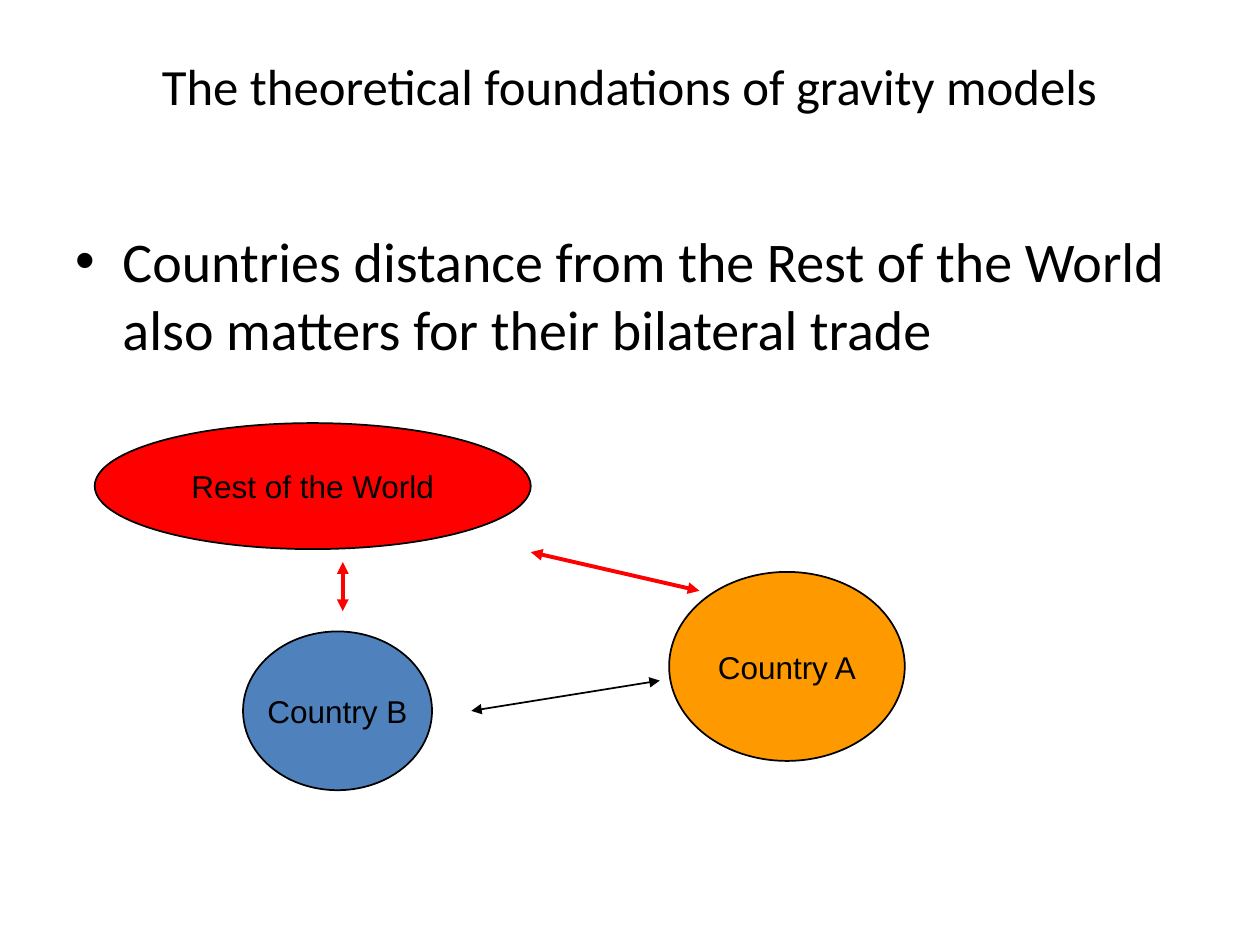
from lxml.etree import SubElement as Sub
from pptx import Presentation as Deck
from pptx.dml.color import RGBColor as Rgb
from pptx.enum.shapes import MSO_CONNECTOR as Link, MSO_SHAPE as Form
from pptx.enum.text import MSO_ANCHOR as Anchor, PP_ALIGN as Align
from pptx.oxml.ns import qn
from pptx.util import Cm, Pt

# Content: places in cm as left, top, width, height
TITLE = ("The theoretical foundations of gravity models", (1.27, 0.76, 22.86, 3.18))
POINT = ("Countries distance from the Rest of the World also matters "
         "for their bilateral trade", (1.27, 4.45, 22.86, 12.57))
NODES = [
    ("Country B", "blue", (4.9, 12.73, 3.81, 3.2)),
    ("Country A", "gold", (13.49, 11.53, 4.75, 3.81)),
    ("Rest of the World", "red", (1.91, 8.53, 8.79, 2.54)),
]
# Arrows: start, end, colour, width
ARROWS = [
    ((9.5, 14.33), (13.3, 13.72), "ink", "thin"),
    ((6.91, 12.32), (6.91, 11.33), "red", "bold"),
    ((14.1, 11.91), (10.7, 11.13), "red", "bold"),
]

THEME = {
    "ink": Rgb(0, 0, 0), "red": Rgb(255, 0, 0),
    "gold": Rgb(255, 153, 0), "blue": Rgb(79, 129, 189),
    "thin": Pt(1), "bold": Pt(2.25),
    "title": {"name": "Calibri", "size": Pt(29)},
    "point": {"name": "Calibri", "size": Pt(32)},
    "node": {"name": "Arial", "size": Pt(18)},
}
INDENT = Cm(0.95)

# Frame formats
HEAD = {"word_wrap": True, "vertical_anchor": Anchor.MIDDLE,
        "margin_bottom": Cm(1.37)}  # title sits one line above the middle
BODY = {"word_wrap": True, "vertical_anchor": Anchor.TOP}
LABEL = {"word_wrap": False, "vertical_anchor": Anchor.MIDDLE}


def put(item, values):
    for key, val in values.items():
        setattr(item, key, val)


def write(shape, text, font, frame, align):
    put(shape.text_frame, frame)
    para = shape.text_frame.paragraphs[0]
    para.alignment = align
    run = para.add_run()
    run.text = text
    put(run.font, THEME[font])
    run.font.color.rgb = THEME["ink"]
    return para


def box(slide, item, font, frame, align):
    text, place = item
    shape = slide.shapes.add_textbox(*map(Cm, place))
    return write(shape, text, font, frame, align)


def bullet(para):
    props = para._p.get_or_add_pPr()
    props.set("marL", str(INDENT))
    props.set("indent", str(-INDENT))
    Sub(props, qn("a:buFont")).set("typeface", "Arial")
    Sub(props, qn("a:buChar")).set("char", "•")


def node(slide, text, fill, place):
    shape = slide.shapes.add_shape(Form.OVAL, *map(Cm, place))
    shape.shadow.inherit = False
    shape.fill.solid()
    shape.fill.fore_color.rgb = THEME[fill]
    shape.line.color.rgb = THEME["ink"]
    shape.line.width = THEME["thin"]
    write(shape, text, "node", LABEL, Align.CENTER)


def arrow(slide, start, end, color, width):
    line = slide.shapes.add_connector(Link.STRAIGHT, *map(Cm, start + end))
    line.line.color.rgb = THEME[color]
    line.line.width = THEME[width]
    for tag in ("a:headEnd", "a:tailEnd"):
        Sub(line.line._get_or_add_ln(), qn(tag)).set("type", "triangle")
    Sub(line._element.spPr, qn("a:effectLst"))


def main():
    deck = Deck()
    put(deck, {"slide_width": Cm(25.4), "slide_height": Cm(19.05)})
    slide = deck.slides.add_slide(deck.slide_layouts[6])

    # Title and point
    box(slide, TITLE, "title", HEAD, Align.CENTER)
    bullet(box(slide, POINT, "point", BODY, Align.LEFT))

    # Diagram
    for item in NODES:
        node(slide, *item)
    for item in ARROWS:
        arrow(slide, *item)

    deck.save("out.pptx")


if __name__ == "__main__":
    main()
